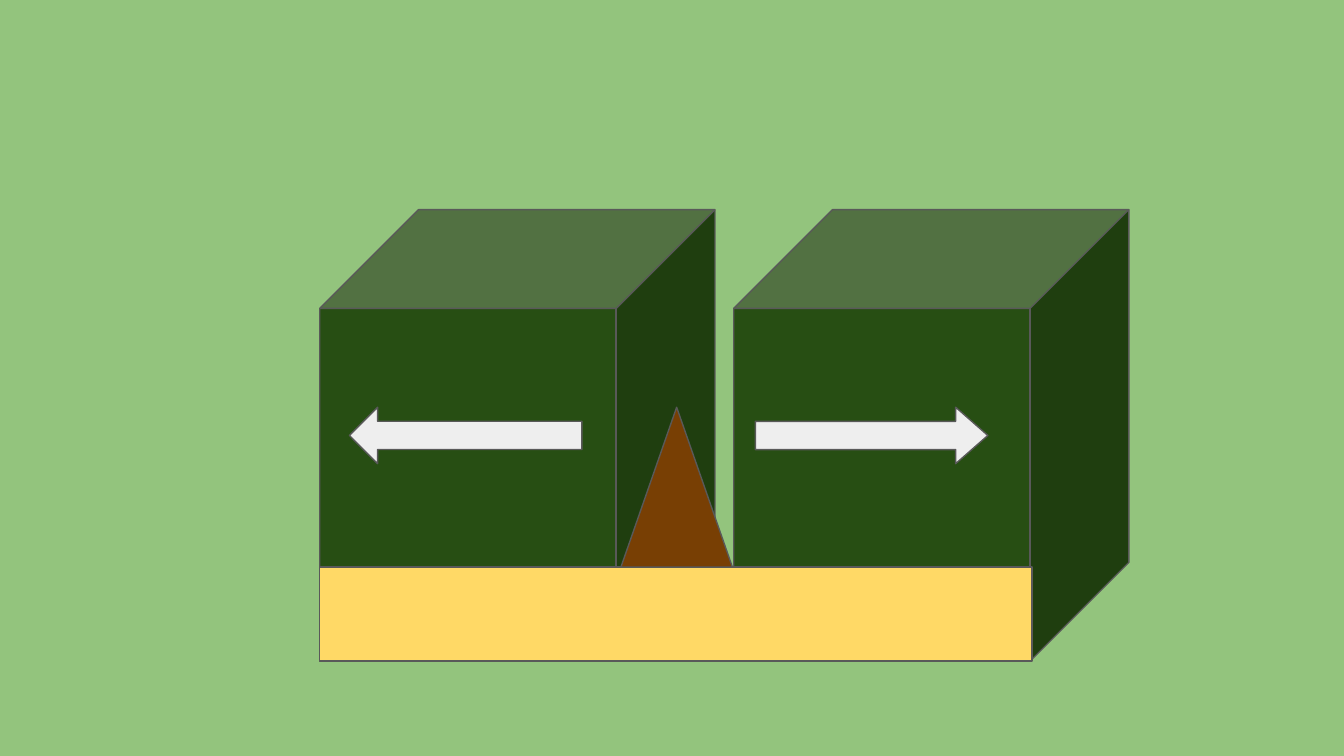
from pptx import Presentation
from pptx.dml.color import RGBColor
from pptx.enum.shapes import MSO_SHAPE
from pptx.util import Inches, Pt

# Widescreen slide, 16:9
SLIDE_WIDTH = 10
SLIDE_HEIGHT = SLIDE_WIDTH * 9 / 16

# Shared positions, in inches
BLOCK_LEFT, BLOCK_TOP = 2.38, 1.56
BLOCK_WIDTH, BLOCK_HEIGHT = 2.94, 3.36
BLOCK_STEP = 3.08
BASE_TOP = 4.22
MIDDLE_TOP = 3.03  # top of the arrows and the wedge

BACKGROUND = "93C47D"
BLOCK_GREEN = "274E13"
ARROW_GREY = "EEEEEE"
BASE_YELLOW = "FFD966"
WEDGE_BROWN = "783F04"
OUTLINE = "595959"


def color(hex_value):
    return RGBColor.from_string(hex_value)


def set_background(slide):
    fill = slide.background.fill
    fill.solid()
    fill.fore_color.rgb = color(BACKGROUND)


def add_solid(slide, kind, left, top, width, height, fill, adjustments=()):
    """Add a filled, outlined preset shape without shadow."""
    shape = slide.shapes.add_shape(
        kind, Inches(left), Inches(top), Inches(width), Inches(height))
    shape.shadow.inherit = False
    shape.fill.solid()
    shape.fill.fore_color.rgb = color(fill)
    shape.line.color.rgb = color(OUTLINE)
    shape.line.width = Pt(0.75)
    for index, value in enumerate(adjustments):
        shape.adjustments[index] = value
    return shape


def add_block(slide, column):
    add_solid(slide, MSO_SHAPE.CUBE, BLOCK_LEFT + column * BLOCK_STEP,
              BLOCK_TOP, BLOCK_WIDTH, BLOCK_HEIGHT, BLOCK_GREEN, (0.25,))


def add_arrow(slide, left, head_length, rotation):
    arrow = add_solid(slide, MSO_SHAPE.LEFT_ARROW, left, MIDDLE_TOP,
                      1.73, 0.42, ARROW_GREY, (0.5, head_length))
    arrow.rotation = rotation


def main():
    presentation = Presentation()
    presentation.slide_width = Inches(SLIDE_WIDTH)
    presentation.slide_height = Inches(SLIDE_HEIGHT)
    slide = presentation.slides.add_slide(presentation.slide_layouts[6])
    set_background(slide)

    # Two blocks side by side
    for column in range(2):
        add_block(slide, column)

    # Arrows pointing apart
    add_arrow(slide, 2.6, 0.5, 0)
    add_arrow(slide, 5.62, 0.57, 180)

    # Base layer and the wedge standing on it
    add_solid(slide, MSO_SHAPE.FLOWCHART_PROCESS, BLOCK_LEFT, BASE_TOP,
              5.3, BLOCK_TOP + BLOCK_HEIGHT - BASE_TOP, BASE_YELLOW)
    add_solid(slide, MSO_SHAPE.ISOSCELES_TRIANGLE, 4.62, MIDDLE_TOP,
              0.83, BASE_TOP - MIDDLE_TOP, WEDGE_BROWN, (0.5,))

    presentation.save("out.pptx")


if __name__ == "__main__":
    main()
